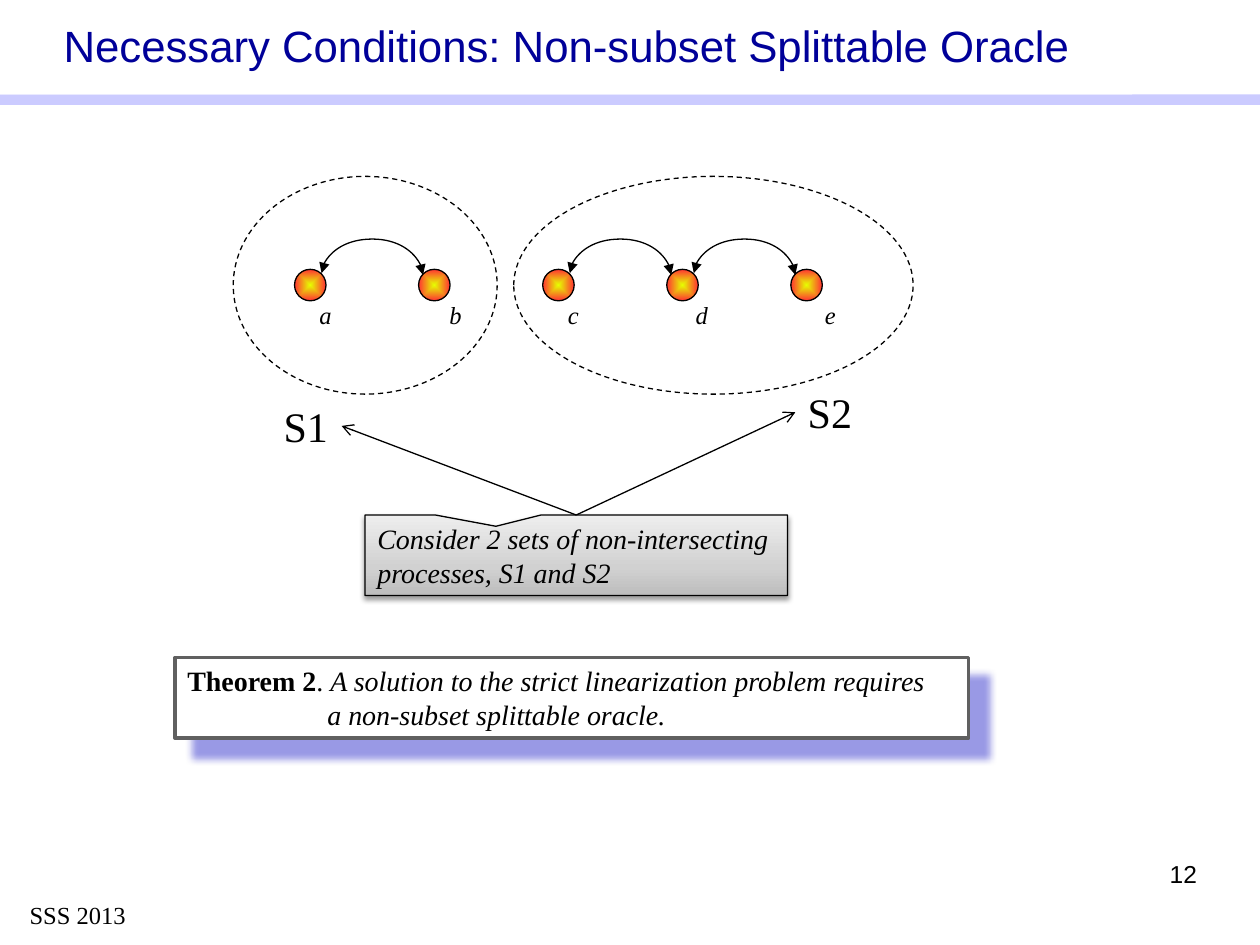
from dataclasses import dataclass

import lxml.etree
import pptx
import pptx.dml.color
import pptx.enum.dml
import pptx.enum.shapes
import pptx.enum.text
import pptx.oxml.ns
import pptx.util

Pt = pptx.util.Pt
qn = pptx.oxml.ns.qn
Shape = pptx.enum.shapes.MSO_SHAPE
Connector = pptx.enum.shapes.MSO_CONNECTOR
Align = pptx.enum.text.PP_ALIGN
Anchor = pptx.enum.text.MSO_ANCHOR


@dataclass(frozen=True)
class Theme:
    ink: str = "000000"
    paper: str = "FFFFFF"
    title: str = "000099"
    band: str = "9999FF"
    frame: str = "606060"
    theorem_shadow: str = "0000BF"
    node: tuple = ((0, "E6FF00"), (100, "FF3333"))
    callout: tuple = ((0, "BDBDBD"), (35, "D1D1D1"), (100, "EEEEEE"))
    sans: str = "Arial"
    serif: str = "Times New Roman"
    title_size: int = 25
    set_size: int = 24
    body_size: int = 16
    small_size: int = 14
    thin: float = 0.75
    thick: float = 2


THEME = Theme()
NODE_SIZE = 18
NODE_LEFT = 168.3
NODE_TOP = 153.9
NODE_PITCH = 70.9


def rgb(color):
    return pptx.dml.color.RGBColor.from_string(color)


def add_child(parent, tag, **attributes):
    child = lxml.etree.SubElement(parent, qn(tag))
    for name, value in attributes.items():
        child.set(name, str(value))
    return child


def add_color(parent, color, alpha=100):
    node = add_child(parent, "a:srgbClr", val=color)
    if alpha < 100:
        add_child(node, "a:alpha", val=alpha * 1000)


def set_line(shape, color=THEME.ink, width=THEME.thin):
    shape.line.color.rgb = rgb(color)
    shape.line.width = Pt(width)


def set_gradient(shape, stops):
    shape.fill.gradient()
    gradient = shape._element.spPr.find(qn("a:gradFill"))
    gradient.clear()
    stop_list = add_child(gradient, "a:gsLst")
    for position, color in stops:
        add_color(add_child(stop_list, "a:gs", pos=position * 1000), color)
    return gradient


def set_shadow(shape, color, alpha, blur, distance, angle):
    effects = shape._element.spPr.find(qn("a:effectLst"))
    shadow = add_child(effects, "a:outerShdw", blurRad=Pt(blur), dist=Pt(distance),
                       dir=angle * 60000, algn="ctr", rotWithShape=0)
    add_color(shadow, color, alpha)


def add_plain_shape(page, kind, left, top, width, height):
    shape = page.shapes.add_shape(kind, Pt(left), Pt(top), Pt(width), Pt(height))
    shape.shadow.inherit = False
    return shape


def style_paragraph(para, size, font=THEME.serif, color=THEME.ink, italic=None, align=Align.LEFT):
    para.alignment = align
    para.font.name = font
    para.font.size = Pt(size)
    para.font.color.rgb = rgb(color)
    para.font.italic = italic


def add_text(page, text, left, top, width, height, size, wrap=False, inset=True, spacing=None,
             anchor=Anchor.TOP, **style):
    box = page.shapes.add_textbox(Pt(left), Pt(top), Pt(width), Pt(height))
    frame = box.text_frame
    frame.word_wrap = wrap
    frame.vertical_anchor = anchor
    if not inset:
        frame.margin_left = frame.margin_right = frame.margin_top = frame.margin_bottom = 0
    para = frame.paragraphs[0]
    para.text = text
    para.line_spacing = spacing
    style_paragraph(para, size, **style)
    return box


def add_band(page):
    band = add_plain_shape(page, Shape.RECTANGLE, 0, 54, 720, 6)
    band.fill.solid()
    band.fill.fore_color.rgb = rgb(THEME.band)
    band.line.fill.background()
    color = band._element.spPr.find(qn("a:solidFill"))[0]
    add_child(color, "a:alpha", val=50000)


def add_node(page, index):
    node = add_plain_shape(page, Shape.OVAL, NODE_LEFT + index * NODE_PITCH, NODE_TOP,
                           NODE_SIZE, NODE_SIZE)
    gradient = set_gradient(node, THEME.node)
    center = add_child(gradient, "a:path", path="shape")
    add_child(center, "a:fillToRect", l=50000, t=50000, r=50000, b=50000)
    set_line(node)


def add_set_outline(page, left, width):
    outline = add_plain_shape(page, Shape.OVAL, left, 100.8, width, 124.4)
    outline.fill.background()
    set_line(outline)
    outline.line.dash_style = pptx.enum.dml.MSO_LINE.DASH


def add_arrow(page, kind, start, end, **heads):
    arrow = page.shapes.add_connector(kind, *(Pt(value) for value in (*start, *end)))
    set_line(arrow)
    line = arrow.line._get_or_add_ln()
    for tag, head in heads.items():
        add_child(line, "a:" + tag, type=head)
    add_child(arrow._element.spPr, "a:effectLst")
    return arrow


def add_arc(page, index):
    middle = NODE_LEFT + NODE_SIZE / 2 + (index + 0.5) * NODE_PITCH
    span = 58
    top = 156.6 - span / 2
    arc = add_arrow(page, Connector.CURVE, (middle - 0.5, top + span), (middle + 0.5, top),
                    headEnd="triangle", tailEnd="triangle")
    properties = arc._element.spPr
    properties.find(qn("a:xfrm")).set("rot", str(270 * 60000))
    guides = properties.find(qn("a:prstGeom")).find(qn("a:avLst"))
    add_child(guides, "a:gd", name="adj1", fmla="val 2063600")


def add_callout(page):
    callout = add_plain_shape(page, Shape.RECTANGULAR_CALLOUT, 208.6, 294.3, 241.4, 46)
    callout.adjustments[0] = -0.19
    callout.adjustments[1] = -0.36
    gradient = set_gradient(callout, THEME.callout)
    add_child(gradient, "a:lin", ang=270 * 60000, scaled=1)
    set_line(callout)
    set_shadow(callout, THEME.ink, 38, 3.1, 1.6, 90)
    callout.text_frame.word_wrap = True
    para = callout.text_frame.paragraphs[0]
    para.text = "Consider 2 sets of non-intersecting processes, S1 and S2"
    style_paragraph(para, THEME.body_size, italic=True)


def add_theorem(page):
    theorem = add_plain_shape(page, Shape.RECTANGLE, 100, 375.7, 453.6, 46)
    theorem.fill.solid()
    theorem.fill.fore_color.rgb = rgb(THEME.paper)
    set_line(theorem, THEME.frame, THEME.thick)
    set_shadow(theorem, THEME.theorem_shadow, 40, 4, 15, 45)
    frame = theorem.text_frame
    frame.word_wrap = True
    frame.vertical_anchor = Anchor.TOP
    first = frame.paragraphs[0]
    style_paragraph(first, THEME.body_size)
    for text, bold, italic in (("Theorem 2", True, False), (". ", False, False),
                               ("A solution to the strict linearization problem requires", False, True)):
        span = first.add_run()
        span.text = text
        span.font.bold = bold
        span.font.italic = italic
    second = frame.add_paragraph()
    second.text = "a non-subset splittable oracle."
    style_paragraph(second, THEME.body_size, italic=True)
    second._p.get_or_add_pPr().set("marL", str(Pt(80)))


def main():
    deck = pptx.Presentation()
    deck.slide_width, deck.slide_height = Pt(720), Pt(540)
    page = deck.slides.add_slide(deck.slide_layouts[6])
    add_band(page)
    add_text(page, "SSS 2013", 9.8, 511, 70, 24.5, THEME.small_size)
    title = add_text(page, "Necessary Conditions: Non-subset Splittable Oracle", 0, 0, 647, 54,
                     THEME.title_size, wrap=True, inset=False, spacing=0.98, anchor=Anchor.MIDDLE,
                     font=THEME.sans, color=THEME.title, align=Align.CENTER)
    title.fill.solid()
    title.fill.fore_color.rgb = rgb(THEME.paper)
    add_text(page, "12", 516, 492, 168, 37.4, THEME.small_size, wrap=True, inset=False,
             spacing=0.95, font=THEME.sans, align=Align.RIGHT)
    add_theorem(page)
    add_callout(page)
    for index, (name, middle) in enumerate(zip("abcde", (186, 260.4, 327.6, 401, 474.5))):
        add_text(page, name, middle - 10.8, 168, 21.6, 24.5, THEME.small_size,
                 italic=True, align=Align.CENTER)
        add_node(page, index)
    for left, width in ((293.6, 228.2), (133.3, 150.8)):
        add_set_outline(page, left, width)
    for index in (0, 2, 3):
        add_arc(page, index)
    for name, left, top, tip in (("S1", 155, 225.4, (195.2, 243.4)),
                                 ("S2", 454.5, 217.6, (454.5, 235.6))):
        add_text(page, name, left, top, 40.3, 36.4, THEME.set_size)
        add_arrow(page, Connector.STRAIGHT, (329.3, 294.3), tip, tailEnd="arrow")
    deck.save("out.pptx")


if __name__ == "__main__":
    main()
